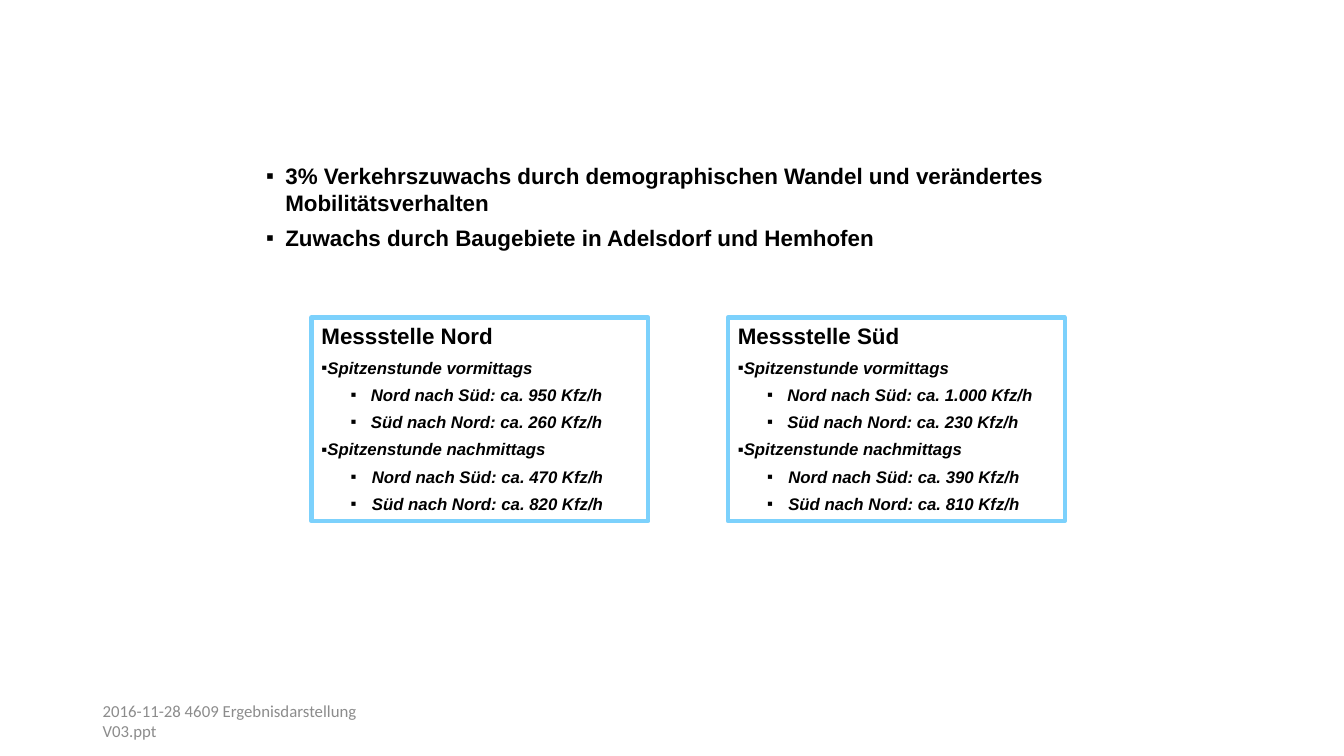
from dataclasses import dataclass

import lxml.etree
import pptx
import pptx.dml.color
import pptx.enum.shapes
import pptx.enum.text
import pptx.oxml.ns
import pptx.slide
import pptx.text.text
import pptx.util

Inches = pptx.util.Inches
Pt = pptx.util.Pt


@dataclass(frozen=True)
class Style:
    size: float
    after: float
    margin: float = 0
    indent: float = 0
    level: int = 0
    bullet: bool = True
    italic: bool = False


@dataclass(frozen=True)
class Station:
    name: str
    left: float
    morning: tuple[str, str]
    afternoon: tuple[str, str]


FORECAST = Style(16, 6, 0.19, -0.19)
HEADING = Style(16, 6, bullet=False)
PEAK_HOUR = Style(12, 5, 0, -0.31, italic=True)
MORNING_FLOW = Style(12, 5, 0.49, -0.2, level=1, italic=True)
AFTERNOON_FLOW = Style(12, 5, 0.5, -0.21, level=1, italic=True)

FORECASTS = [
    "3% Verkehrszuwachs durch demographischen Wandel und verändertes Mobilitätsverhalten",
    "Zuwachs durch Baugebiete in Adelsdorf und Hemhofen",
]
STATIONS = [
    Station("Nord", 3.09, ("950", "260"), ("470", "820")),
    Station("Süd", 7.22, ("1.000", "230"), ("390", "810")),
]
DIRECTIONS = ("Nord nach Süd", "Süd nach Nord")


def colour(value: str) -> pptx.dml.color.RGBColor:
    return pptx.dml.color.RGBColor.from_string(value)


def format_runs(paragraph: pptx.text.text._Paragraph, name: str, size: float,
                shade: str, bold: bool = False, italic: bool = False) -> None:
    for run in paragraph.runs:
        run.font.name = name
        run.font.size = Pt(size)
        run.font.bold = bold
        run.font.italic = italic
        run.font.color.rgb = colour(shade)


def format_paragraph(paragraph: pptx.text.text._Paragraph, style: Style) -> None:
    paragraph.alignment = pptx.enum.text.PP_ALIGN.LEFT
    paragraph.level = style.level
    paragraph.space_before = Pt(0)
    paragraph.space_after = Pt(style.after)
    if style.bullet:
        properties = paragraph._p.get_or_add_pPr()
        properties.set("marL", str(Inches(style.margin)))
        properties.set("indent", str(Inches(style.indent)))
        for tag, key, value in (("a:buFont", "typeface", "Arial"), ("a:buChar", "char", "▪")):
            lxml.etree.SubElement(properties, pptx.oxml.ns.qn(tag)).set(key, value)
    format_runs(paragraph, "Arial", style.size, "000000", bold=True, italic=style.italic)


def write_lines(frame: pptx.text.text.TextFrame, lines: list[tuple[str, Style]]) -> None:
    frame.word_wrap = True
    frame.vertical_anchor = pptx.enum.text.MSO_ANCHOR.TOP
    frame.auto_size = pptx.enum.text.MSO_AUTO_SIZE.SHAPE_TO_FIT_TEXT
    frame.text = "\n".join(text for text, _ in lines)
    for paragraph, (_, style) in zip(frame.paragraphs, lines):
        format_paragraph(paragraph, style)


def station_lines(station: Station) -> list[tuple[str, Style]]:
    lines = [(f"Messstelle {station.name}", HEADING)]
    for daytime, volumes, flow in (
        ("vormittags", station.morning, MORNING_FLOW),
        ("nachmittags", station.afternoon, AFTERNOON_FLOW),
    ):
        lines.append((f"Spitzenstunde {daytime}", PEAK_HOUR))
        lines += [(f"{direction}: ca. {volume} Kfz/h", flow)
                  for direction, volume in zip(DIRECTIONS, volumes)]
    return lines


def draw_station(slide: pptx.slide.Slide, station: Station) -> None:
    panel = slide.shapes.add_shape(pptx.enum.shapes.MSO_SHAPE.RECTANGLE, Inches(station.left),
                                   Inches(3.15), Inches(3.34), Inches(2.02))
    panel.shadow.inherit = False
    panel.fill.background()
    panel.line.color.rgb = colour("7CD1FC")
    panel.line.width = Pt(3)
    write_lines(panel.text_frame, station_lines(station))


def draw_forecasts(slide: pptx.slide.Slide) -> None:
    forecasts = slide.placeholders[1]
    forecasts.left, forecasts.top = Inches(2.54), Inches(1.56)
    forecasts.width, forecasts.height = Inches(8.72), Inches(0.99)
    write_lines(forecasts.text_frame, [(text, FORECAST) for text in FORECASTS])


def draw_footer(slide: pptx.slide.Slide) -> None:
    footer = slide.shapes.add_textbox(Inches(0.92), Inches(6.95), Inches(3), Inches(0.4))
    frame = footer.text_frame
    frame.word_wrap = True
    frame.vertical_anchor = pptx.enum.text.MSO_ANCHOR.MIDDLE
    frame.text = "2016-11-28 4609 Ergebnisdarstellung V03.ppt"
    format_runs(frame.paragraphs[0], "Calibri", 12, "8C8C8C")


def main() -> None:
    presentation = pptx.Presentation()
    presentation.slide_width = Inches(13.33)
    presentation.slide_height = Inches(7.5)
    slide = presentation.slides.add_slide(presentation.slide_layouts[1])
    empty_title = slide.shapes.title.element
    empty_title.getparent().remove(empty_title)
    draw_footer(slide)
    draw_forecasts(slide)
    for station in STATIONS:
        draw_station(slide, station)
    presentation.save("out.pptx")


if __name__ == "__main__":
    main()
